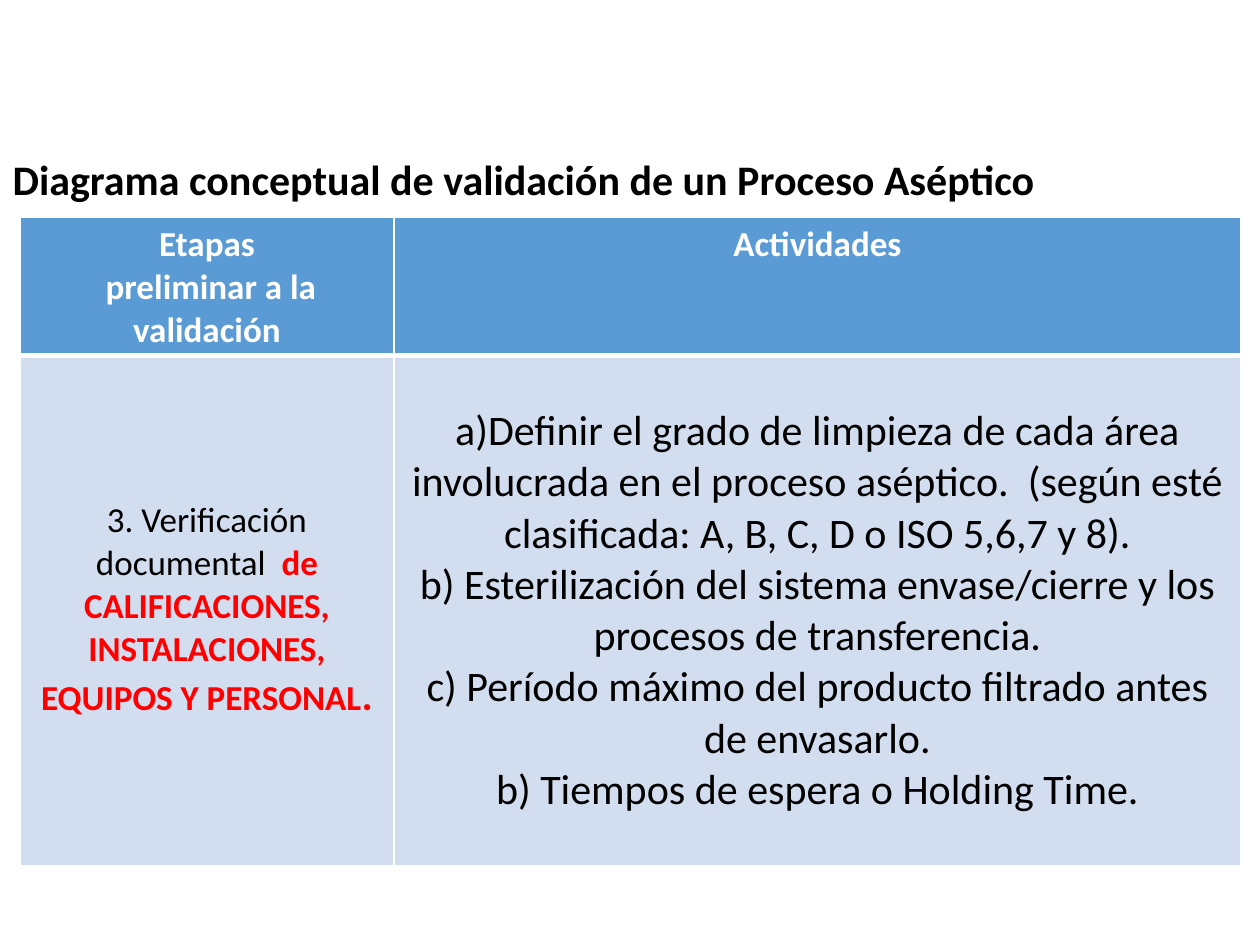
from lxml import etree
from pptx import Presentation
from pptx.dml.color import RGBColor
from pptx.enum.text import MSO_ANCHOR, MSO_AUTO_SIZE, PP_ALIGN
from pptx.oxml.ns import qn
from pptx.util import Pt

LEFT, CENTER = PP_ALIGN.LEFT, PP_ALIGN.CENTER
TOP, MIDDLE = MSO_ANCHOR.TOP, MSO_ANCHOR.MIDDLE
BLACK = RGBColor(0x00, 0x00, 0x00)
WHITE = RGBColor(0xFF, 0xFF, 0xFF)
RED = RGBColor(0xFF, 0x00, 0x00)
BLUE = RGBColor(0x5B, 0x9B, 0xD5)
PALE = RGBColor(0xD2, 0xDE, 0xEF)
SCALE = 914400 / 126  # EMU in one px

HEAD = dict(size=Pt(20), bold=True, color=WHITE)
STAGE = dict(size=Pt(20), bold=False, color=BLACK)
ALERT = dict(size=Pt(20), bold=True, color=RED)
STOP = dict(size=Pt(24), bold=True, color=RED)
TASK = dict(size=Pt(24), bold=False, color=BLACK)
TITLE = dict(size=Pt(24), bold=True, color=BLACK)


def px(*vals):
    return [round(v * SCALE) for v in vals]


def write(frame, paras, align):
    """Fill a text frame; each paragraph is a list of (text, format) runs."""
    for i, runs in enumerate(paras):
        para = frame.add_paragraph() if i else frame.paragraphs[0]
        para.alignment = align
        for text, form in runs:
            run = para.add_run()
            run.text = text
            run.font.name = "Calibri"
            for key, val in form.items():
                if key == "color":
                    run.font.color.rgb = val
                else:
                    setattr(run.font, key, val)


prs = Presentation()
prs.slide_width, prs.slide_height = px(1260, 945)
slide = prs.slides.add_slide(prs.slide_layouts[5])

# Title
title = slide.shapes.title
title.left, title.top, title.width, title.height = px(0, 147, 1077, 63)
frame = title.text_frame
frame.word_wrap = True
frame.auto_size = MSO_AUTO_SIZE.SHAPE_TO_FIT_TEXT
frame.vertical_anchor = TOP
write(frame, [[("Diagrama conceptual de validación de un Proceso Aséptico", TITLE)]], LEFT)

# Table grid
cols, rows = px(374, 847), px(138, 510)
table = slide.shapes.add_table(2, 2, *px(20, 217), sum(cols), sum(rows)).table
for col, width in zip(table.columns, cols):
    col.width = width
for row, height in zip(table.rows, rows):
    row.height = height

# Cell texts
tasks = [
    "a)Definir el grado de limpieza de cada área involucrada en el proceso aséptico.  "
    "(según esté clasificada: A, B, C, D o ISO 5,6,7 y 8).",
    "b) Esterilización del sistema envase/cierre y los procesos de transferencia.",
    "c) Período máximo del producto filtrado antes de envasarlo.",
    "b) Tiempos de espera o Holding Time.",
]
stage = [
    ("3. Verificación documental  ", STAGE),
    ("de CALIFICACIONES, INSTALACIONES, EQUIPOS Y PERSONAL", ALERT),
    (".", STOP),
]
cells = [
    [[[("Etapas", HEAD)], [(" preliminar a la validación", HEAD)]],
     [[("Actividades", HEAD)]]],
    [[stage], [[(task, TASK)] for task in tasks]],
]
looks = [(BLUE, TOP, {"L": 1, "R": 1, "T": 1, "B": 3}),
         (PALE, MIDDLE, {"L": 1, "R": 1, "T": 3, "B": 1})]

for r, (fill, anchor, edges) in enumerate(looks):
    for c, paras in enumerate(cells[r]):
        cell = table.cell(r, c)
        cell.vertical_anchor = anchor
        write(cell.text_frame, paras, CENTER)
        # Borders come before the fill in the cell properties
        props = cell._tc.get_or_add_tcPr()
        for side, width in edges.items():
            line = etree.SubElement(props, qn("a:ln" + side), w=str(Pt(width)))
            solid = etree.SubElement(line, qn("a:solidFill"))
            etree.SubElement(solid, qn("a:srgbClr"), val=str(WHITE))
        cell.fill.solid()
        cell.fill.fore_color.rgb = fill

prs.save("out.pptx")
